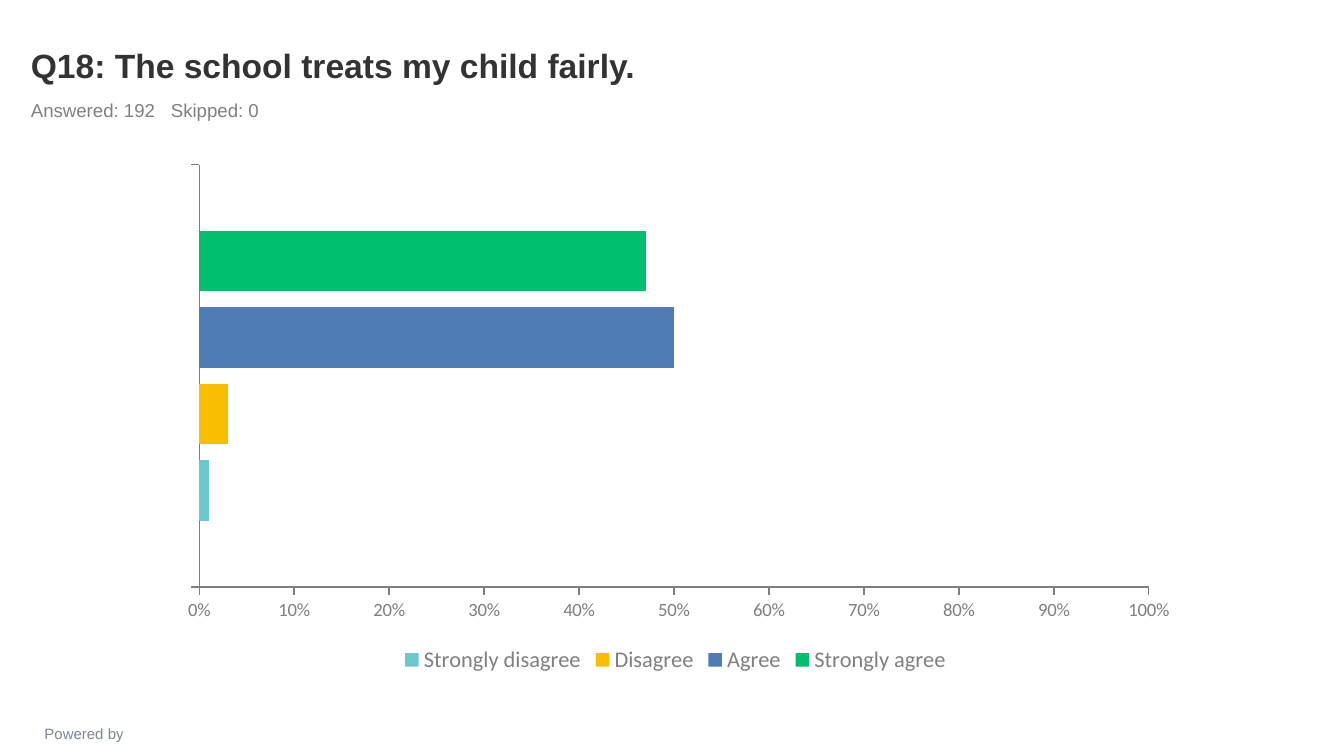
from lxml import etree
from pptx import Presentation
from pptx.chart import data
from pptx.dml.color import RGBColor
from pptx.enum import chart as charts, text
from pptx.oxml import ns
from pptx.util import Pt

DARK = RGBColor(0x33, 0x33, 0x33)
GRAY = RGBColor(0x80, 0x80, 0x80)
AXIS_GRAY = RGBColor(0x7F, 0x7F, 0x7F)
SLATE = RGBColor(0x7C, 0x87, 0x8E)
GREEN = RGBColor(0x00, 0xBF, 0x6F)
BLUE = RGBColor(0x50, 0x7C, 0xB6)
YELLOW = RGBColor(0xF9, 0xBE, 0x00)
TEAL = RGBColor(0x6B, 0xC8, 0xCD)

ANSWERS = [
    ("Strongly agree", 0.47, GREEN),
    ("Agree", 0.5, BLUE),
    ("Disagree", 0.03, YELLOW),
    ("Strongly disagree", 0.01, TEAL),
]


def set_values(target, values):
    """Set each named attribute of the target."""
    for name, value in values.items():
        setattr(target, name, value)


def add_line(slide, box, words, size, color, bold=False, tab=None,
             anchor=text.MSO_ANCHOR.TOP, align=text.PP_ALIGN.LEFT):
    """Place one line of Arial text in the box, with an optional tab stop."""
    frame = slide.shapes.add_textbox(*map(Pt, box)).text_frame
    set_values(frame, {"word_wrap": True, "vertical_anchor": anchor})
    paragraph = frame.paragraphs[0]
    paragraph.alignment = align
    if tab:
        stops = etree.SubElement(paragraph._p.get_or_add_pPr(), ns.qn("a:tabLst"))
        etree.SubElement(stops, ns.qn("a:tab"), pos=str(Pt(tab)), algn="l")
    run = paragraph.add_run()
    run.text = words
    set_values(run.font, {"name": "Arial", "size": Pt(size), "bold": bold})
    run.font.color.rgb = color


def add_heading(slide, left, top, width, height):
    """Place the question above its response counts."""
    question_height = height * 0.7
    add_line(slide, (left, top, width, question_height),
             "Q18: The school treats my child fairly.", 18, DARK, bold=True,
             anchor=text.MSO_ANCHOR.BOTTOM)
    add_line(slide, (left, top + question_height, width, height - question_height),
             "Answered: 192\tSkipped: 0", 10, GRAY, tab=75)


def style_axis(axis, values):
    """Apply the shared gray axis look and the axis's own values."""
    set_values(axis, {
        "has_major_gridlines": False,
        "major_tick_mark": charts.XL_TICK_MARK.OUTSIDE,
        "minor_tick_mark": charts.XL_TICK_MARK.NONE,
        **values,
    })
    axis.format.line.width = Pt(0.75)
    axis.format.line.color.rgb = AXIS_GRAY
    axis.tick_labels.font.size = Pt(10)
    axis.tick_labels.font.color.rgb = AXIS_GRAY


def add_answer_chart(slide, left, top, width, height):
    """Place the bar chart of answer shares in the box."""
    shares = data.CategoryChartData(number_format="0%")
    shares.categories = [" "]
    for answer, share, _ in ANSWERS:
        shares.add_series(answer, [share])
    chart = slide.shapes.add_chart(
        charts.XL_CHART_TYPE.BAR_CLUSTERED,
        *map(Pt, (left, top, width, height)), shares).chart
    set_values(chart, {"has_title": False, "has_legend": True})
    set_values(chart.font, {"name": "Calibri", "size": Pt(18)})
    chart.font.color.rgb = DARK

    plot = chart.plots[0]
    set_values(plot, {"gap_width": 219, "overlap": -27, "vary_by_categories": False})
    for series, (_, _, color) in zip(plot.series, ANSWERS):
        series.invert_if_negative = False
        series.format.fill.solid()
        series.format.fill.fore_color.rgb = color

    style_axis(chart.category_axis, {
        "reverse_order": True,
        "tick_label_position": charts.XL_TICK_LABEL_POSITION.LOW,
    })
    style_axis(chart.value_axis, {
        "minimum_scale": 0, "maximum_scale": 1, "major_unit": 0.1,
    })
    chart.value_axis._element.find(ns.qn("c:crosses")).set("val", "max")
    set_values(chart.value_axis.tick_labels,
               {"number_format": "0%", "number_format_is_linked": False})

    set_values(chart.legend, {
        "position": charts.XL_LEGEND_POSITION.BOTTOM, "include_in_layout": False,
    })
    chart.legend.font.size = Pt(12)
    chart.legend.font.color.rgb = AXIS_GRAY


def add_footer(slide, left, top, width, height):
    """Place the small credit line in the box."""
    add_line(slide, (left, top, width, height), "Powered by", 8, SLATE,
             align=text.PP_ALIGN.CENTER)


def main():
    """Build and save the survey slide."""
    deck = Presentation()
    set_values(deck, {"slide_width": Pt(720), "slide_height": Pt(405)})
    slide = deck.slides.add_slide(deck.slide_layouts[6])
    add_footer(slide, 3.6, 384.5, 83, 13)
    add_heading(slide, 9.5, 6, 648, 62)
    add_answer_chart(slide, 86.4, 82.6, 551, 281)
    deck.save("out.pptx")


if __name__ == "__main__":
    main()
